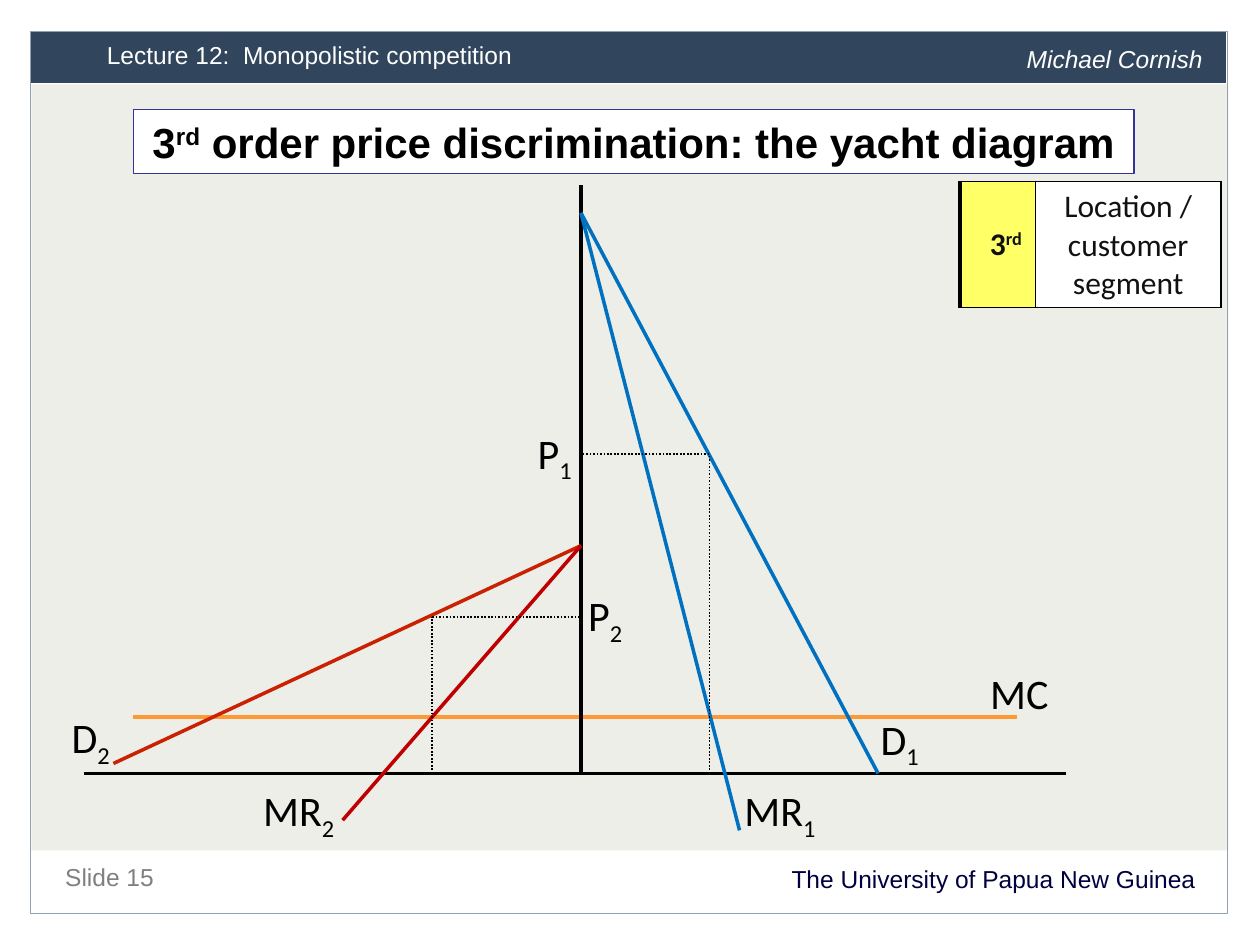
from pptx import Presentation
from pptx.dml.color import RGBColor
from pptx.enum.dml import MSO_LINE
from pptx.enum.shapes import MSO_CONNECTOR, MSO_SHAPE
from pptx.enum.text import MSO_ANCHOR, PP_ALIGN
from pptx.util import Pt
from lxml.etree import SubElement
from pptx.oxml.ns import qn


def color(value):
    return RGBColor.from_string(value)


def write(frame, parts, size, face, ink, align=PP_ALIGN.LEFT, spacing=None, bold=False, italic=False):
    para = frame.paragraphs[0]
    para.alignment = align
    if spacing:
        para.line_spacing = Pt(spacing)
    para.font.size = Pt(size)
    para.font.name = face
    para.font.bold = bold
    para.font.italic = italic
    para.font.color.rgb = color(ink)
    for text, baseline in parts:
        span = para.add_run()
        span.text = text
        if baseline:
            span._r.get_or_add_rPr().set("baseline", str(baseline * 1000))


deck = Presentation()
deck.slide_width, deck.slide_height = Pt(720), Pt(540)
page = deck.slides.add_slide(deck.slide_layouts[6])

panels = [
    (18, 48.2, 684, 437.8, "EDEEE8", None, 0),
    (16.6, 17.3, 684, 30.2, "31465C", "FFFFFF", 0.5),
    (17.3, 18, 684, 504, None, "91A1B0", 0.75),
    (76.3, 62.6, 571.7, 36.7, "FFFFFF", "333399", 0.75),
]
for left, top, width, height, fill, edge, weight in panels:
    panel = page.shapes.add_shape(MSO_SHAPE.RECTANGLE, Pt(left), Pt(top), Pt(width), Pt(height))
    panel.shadow.inherit = False
    if fill:
        panel.fill.solid()
        panel.fill.fore_color.rgb = color(fill)
    else:
        panel.fill.background()
    if edge:
        panel.line.color.rgb = color(edge)
        panel.line.width = Pt(weight)
    else:
        panel.line.fill.background()

title = panel.text_frame
title.word_wrap = False
title.vertical_anchor = MSO_ANCHOR.MIDDLE
write(title, [("3", 0), ("rd", 30), (" order price discrimination: the yacht diagram", 0)],
      24, "Arial", "000000", PP_ALIGN.CENTER, bold=True)

captions = [
    ("Lecture 12:  Monopolistic competition", 54, 18, 441.4, 26.6, "FFFFFF", PP_ALIGN.LEFT, 18, False),
    ("Michael Cornish", 579.6, 20.2, 118.1, 26.6, "FFFFFF", PP_ALIGN.LEFT, 18, True),
    ("Slide 15", 30.2, 486, 311.8, 24.5, "808080", PP_ALIGN.LEFT, 20, False),
    ("The University of Papua New Guinea", 30.2, 491.8, 660.2, 23, "000041", PP_ALIGN.RIGHT, 15, False),
]
for text, left, top, width, height, ink, align, spacing, italic in captions:
    box = page.shapes.add_textbox(Pt(left), Pt(top), Pt(width), Pt(height))
    box.text_frame.word_wrap = True
    write(box.text_frame, [(text, 0)], 14, "Arial", ink, align, spacing, italic=italic)

axis_x, axis_y = 332, 442
peak_1, peak_2 = 121.7, 311.8
quantity_1, quantity_2 = 405.4, 247
price_1, price_2 = 259.6, 352.4
lines = [
    (76.3, 409.7, 581, 409.7, "FF9933", False),
    (axis_x, 105.8, axis_x, axis_y, "000000", False),
    (48.2, axis_y, 609.1, axis_y, "000000", False),
    (axis_x, peak_1, 422.6, 474.5, "0070C0", False),
    (axis_x, peak_1, 501.8, axis_y, "0070C0", False),
    (axis_x, peak_2, 64.8, 436.3, "CA2102", False),
    (axis_x, peak_2, 195.8, 468.7, "C00000", False),
    (quantity_2, axis_y, quantity_2, price_2, "000000", True),
    (quantity_2, price_2, axis_x, price_2, "000000", True),
    (quantity_1, axis_y, quantity_1, price_1, "000000", True),
    (quantity_1, price_1, axis_x, price_1, "000000", True),
]
for x1, y1, x2, y2, ink, dotted in lines:
    line = page.shapes.add_connector(MSO_CONNECTOR.STRAIGHT, Pt(x1), Pt(y1), Pt(x2), Pt(y2))
    line.line.color.rgb = color(ink)
    line.line.width = Pt(1 if dotted else 2)
    if dotted:
        line.line.dash_style = MSO_LINE.ROUND_DOT
    SubElement(line._element.spPr, qn("a:effectLst"))

labels = [
    ("D", "1", 496.1, 403.9, 39.6),
    ("D", "2", 33.8, 403.2, 39.6),
    ("MR", "2", 143.3, 445, 56.9),
    ("MR", "1", 418.3, 445, 56.9),
    ("P", "1", 300.2, 240.5, 39.6),
    ("P", "2", 329, 333.4, 39.6),
    ("MC", "", 558.7, 378, 56.9),
]
for name, index, left, top, width in labels:
    box = page.shapes.add_textbox(Pt(left), Pt(top), Pt(width), Pt(34.6))
    box.text_frame.word_wrap = True
    parts = [(name, 0), (index, -25)] if index else [(name, 0)]
    write(box.text_frame, parts, 24, "Calibri", "000000")

table = page.shapes.add_table(1, 2, Pt(548.6), Pt(103.7), Pt(149), Pt(72)).table
cells = [
    ([("3", 0), ("rd", 30)], 43.2, "FFFF66", PP_ALIGN.RIGHT, True, 2.25),
    ([("Location / customer segment", 0)], 105.8, "FFFFFF", PP_ALIGN.CENTER, False, 1),
]
for column, (parts, width, fill, align, bold, left_weight) in enumerate(cells):
    table.columns[column].width = Pt(width)
    cell = table.cell(0, column)
    cell.vertical_anchor = MSO_ANCHOR.MIDDLE
    cell.margin_left = cell.margin_right = Pt(7.9)
    write(cell.text_frame, parts, 18, "Calibri", "111111", align, bold=bold)
    properties = cell._tc.get_or_add_tcPr()
    for side, weight in (("L", left_weight), ("R", 1), ("T", 1), ("B", 1)):
        border = SubElement(properties, qn(f"a:ln{side}"), w=str(Pt(weight)))
        SubElement(SubElement(border, qn("a:solidFill")), qn("a:srgbClr"), val="000000")
    cell.fill.solid()
    cell.fill.fore_color.rgb = color(fill)

deck.save("out.pptx")
